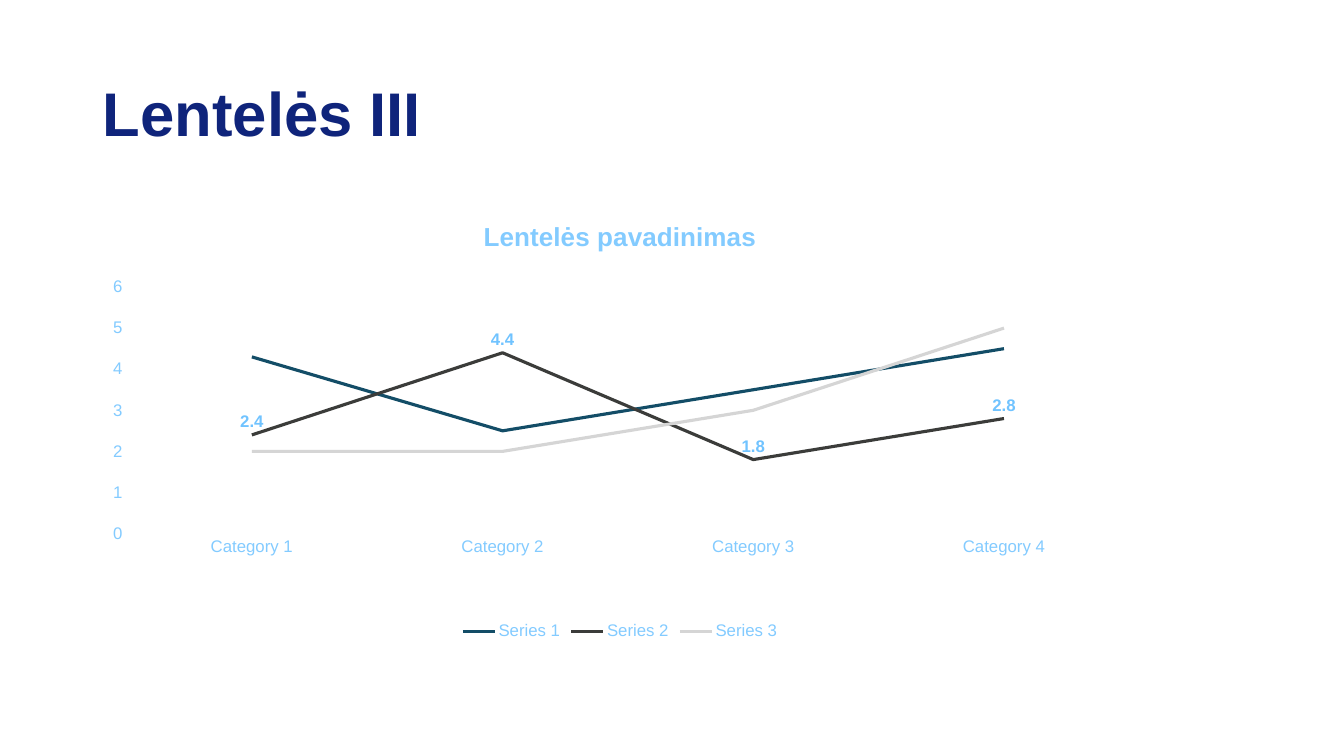
"""Build a slide with a title and a line chart of three series."""
from lxml import etree
from pptx import Presentation
from pptx import util as u
from pptx.chart.data import CategoryChartData
from pptx.dml.color import RGBColor
from pptx.enum import chart as ch, text
from pptx.oxml.ns import qn

NAVY = RGBColor(0x0F, 0x24, 0x7B)
SKY = RGBColor(0x83, 0xCB, 0xFF)
LABEL = RGBColor(0x70, 0xC3, 0xFF)
TEAL = RGBColor(0x13, 0x4D, 0x67)
DARK = RGBColor(0x3B, 0x3C, 0x3A)
GREY = RGBColor(0xD5, 0xD5, 0xD5)

TITLE = "Lentelės III"
HEAD = "Lentelės pavadinimas"
CATS = ["Category 1", "Category 2", "Category 3", "Category 4"]
SERIES = [
    ("Series 1", (4.3, 2.5, 3.5, 4.5), TEAL),
    ("Series 2", (2.4, 4.4, 1.8, 2.8), DARK),
    ("Series 3", (2, 2, 3, 5), GREY),
]
MARKED = "Series 2"
PLOT = {"x": 0.032, "y": 0.195, "w": 0.951, "h": 0.556}
LEFT = 0.92


def style(font, size, color, bold=False):
    font.name = "Arial"
    font.size = u.Pt(size)
    font.bold = bold
    font.color.rgb = color


def add_title(slide):
    box = slide.shapes.title
    box.left, box.top = u.Inches(LEFT), u.Inches(0.78)
    box.width, box.height = u.Inches(9.77), u.Inches(1.45)
    frame = box.text_frame
    frame.word_wrap = True
    frame.auto_size = text.MSO_AUTO_SIZE.NONE
    frame.vertical_anchor = text.MSO_ANCHOR.TOP
    para = frame.paragraphs[0]
    para.alignment = text.PP_ALIGN.LEFT
    para.line_spacing = 0.9
    run = para.add_run()
    run.text = TITLE
    style(run.font, 44, NAVY, True)


def set_plot(chart):
    area = chart.element.find(".//" + qn("c:plotArea"))
    for old in area.findall(qn("c:layout")):
        area.remove(old)
    layout = etree.Element(qn("c:layout"))
    area.insert(0, layout)
    manual = etree.SubElement(layout, qn("c:manualLayout"))
    parts = {"layoutTarget": "inner", "xMode": "edge", "yMode": "edge", **PLOT}
    for tag, val in parts.items():
        etree.SubElement(manual, qn("c:" + tag)).set("val", str(val))


def add_chart(slide):
    data = CategoryChartData()
    data.categories = CATS
    for name, vals, _ in SERIES:
        data.add_series(name, vals)
    place = [u.Inches(n) for n in (LEFT, 1.99, 10.46, 4.4)]
    chart = slide.shapes.add_chart(ch.XL_CHART_TYPE.LINE, *place, data).chart
    style(chart.font, 12, SKY)
    chart.has_title = True
    run = chart.chart_title.text_frame.paragraphs[0].add_run()
    run.text = HEAD
    style(run.font, 18.6, SKY, True)
    chart.chart_title.include_in_layout = False
    chart.has_legend = True
    chart.legend.position = ch.XL_LEGEND_POSITION.BOTTOM
    chart.legend.include_in_layout = False
    style(chart.legend.font, 12, SKY)

    for axis in (chart.category_axis, chart.value_axis):
        axis.has_major_gridlines = False
        axis.major_tick_mark = axis.minor_tick_mark = ch.XL_TICK_MARK.NONE
        axis.format.line.fill.background()
        style(axis.tick_labels.font, 12, SKY)
    scale = chart.value_axis
    scale.minimum_scale, scale.maximum_scale, scale.major_unit = 0, 6, 1

    plot = chart.plots[0]
    plot.vary_by_categories = False
    for line, (name, _, color) in zip(plot.series, SERIES):
        line.smooth = False
        line.marker.style = ch.XL_MARKER_STYLE.NONE
        line.format.line.color.rgb = color
        line.format.line.width = u.Pt(2.25)
        if name == MARKED:
            labels = line.data_labels
            labels.show_value = True
            labels.position = ch.XL_LABEL_POSITION.ABOVE
            style(labels.font, 12, LABEL, True)
    set_plot(chart)


def main():
    deck = Presentation()
    deck.slide_width, deck.slide_height = u.Inches(13.33), u.Inches(7.5)
    slide = deck.slides.add_slide(deck.slide_layouts[5])
    add_title(slide)
    add_chart(slide)
    deck.save("out.pptx")


if __name__ == "__main__":
    main()
